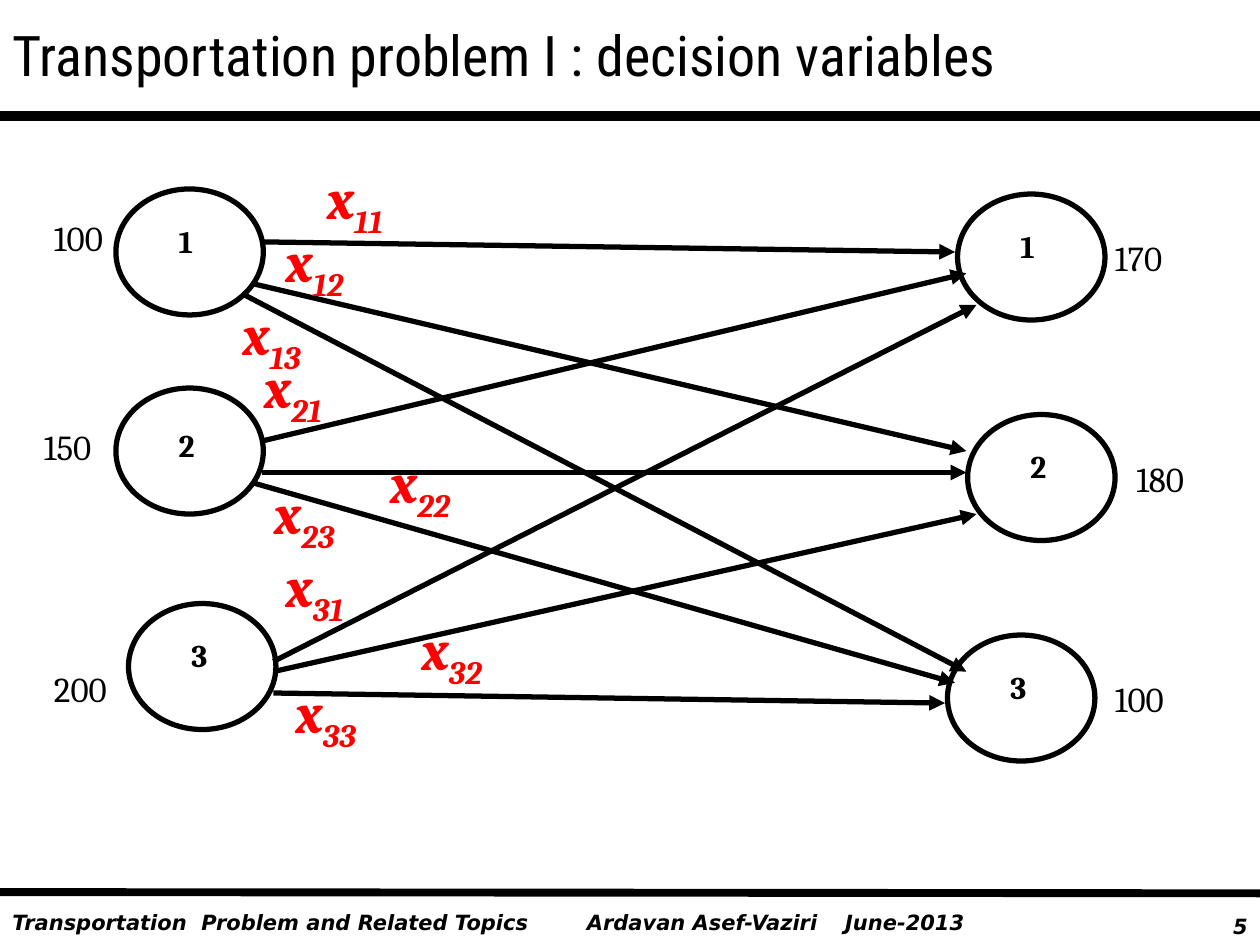
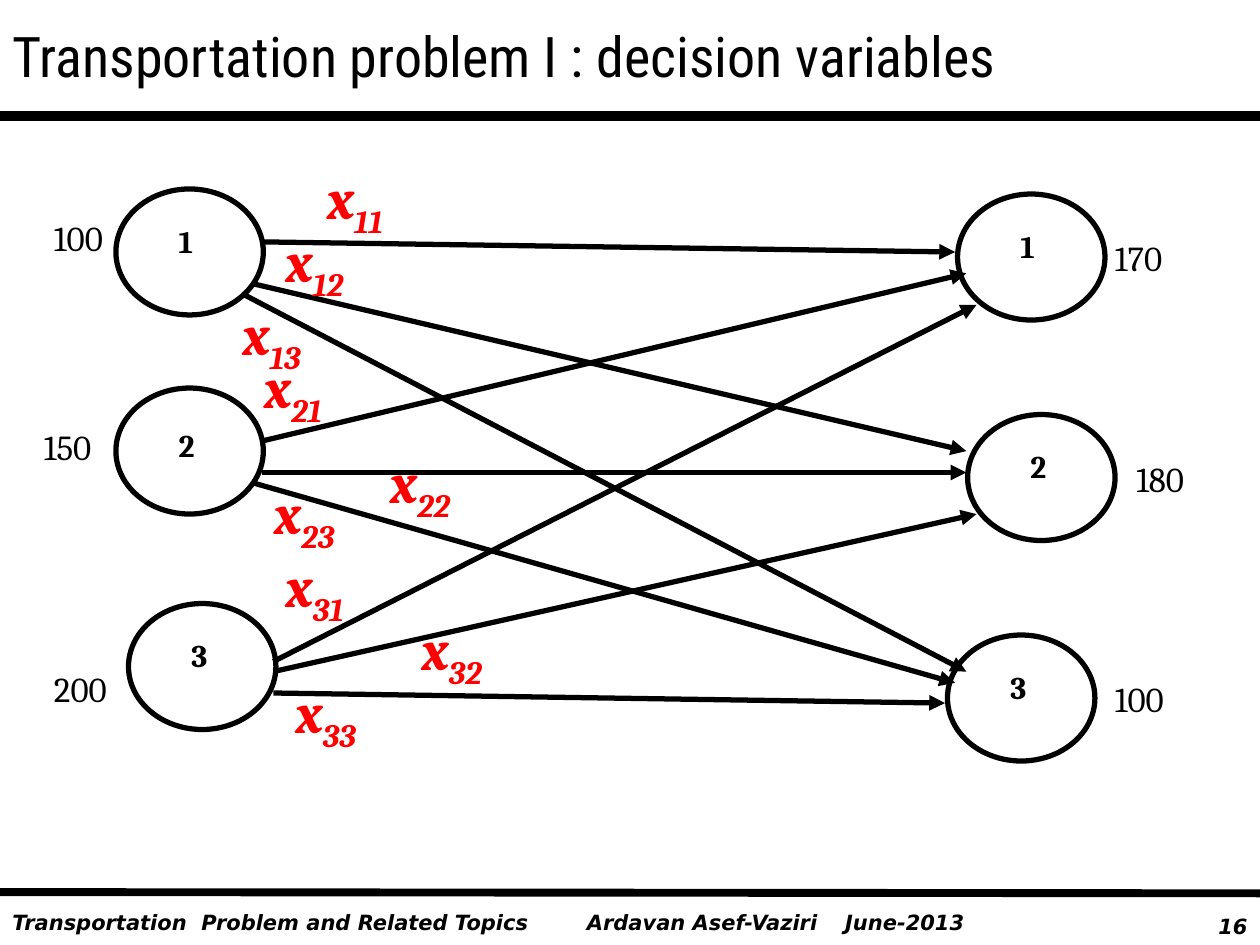
from dataclasses import dataclass

from pptx import Presentation
from pptx import util as u
from pptx.dml.color import RGBColor
from pptx.enum import shapes, text
from pptx.oxml.ns import qn
from lxml import etree


@dataclass(frozen=True)
class Theme:
    ink: str = "000000"
    accent: str = "FF0000"
    title_font: str = "Roboto Condensed"
    footer_font: str = "DejaVu Sans"
    diagram_font: str = "Cambria"
    title_size: int = 32
    variable_size: int = 32
    quantity_size: int = 20
    node_size: int = 18
    footer_size: int = 12
    top_rule: float = 6
    bottom_rule: float = 4.5
    diagram_line: float = 3


THEME = Theme()
TITLE = "Transportation problem I : decision variables"
NODE_WIDTH, NODE_HEIGHT = 1.17, 1

# Nodes: number, left, top, drop of the number inside the circle
SOURCES = [("1", 0.92, 1.5, 0.21), ("2", 0.92, 3.08, 0.25), ("3", 1.02, 4.79, 0.21)]
DESTINATIONS = [("1", 7.6, 1.54, 0.21), ("2", 7.68, 3.29, 0.21), ("3", 7.52, 5.04, 0.21)]

# Supplies and demands: amount, left, top
QUANTITIES = [
    ("100", 0.33, 1.67), ("150", 0.25, 3.33), ("200", 0.33, 5.25),
    ("170", 8.75, 1.83), ("180", 8.92, 3.58), ("100", 8.75, 5.33),
]

# Routes: source and destination, arrow start, arrow end, variable position
ROUTES = [
    ("11", (2.08, 1.92), (7.58, 2), (2.5, 1.25)),
    ("12", (2, 2.25), (7.67, 3.58), (2.17, 1.75)),
    ("13", (1.92, 2.33), (7.67, 5.33), (1.83, 2.33)),
    ("21", (2.08, 3.5), (7.67, 2.17), (2, 2.75)),
    ("22", (2.08, 3.75), (7.67, 3.75), (3, 3.5)),
    ("23", (2, 3.83), (7.58, 5.42), (2.08, 3.75)),
    ("31", (2.17, 5.25), (7.75, 2.42), (2.17, 4.33)),
    ("32", (2.17, 5.33), (7.75, 4.08), (3.25, 4.83)),
    ("33", (2.17, 5.5), (7.5, 5.58), (2.25, 5.33)),
]


def add_run(paragraph, words, *, font, size, color=THEME.ink, bold=False,
            italic=False, baseline=None):
    run = paragraph.add_run()
    run.text = words
    run.font.name = font
    run.font.size = u.Pt(size)
    run.font.bold = bold
    run.font.italic = italic
    run.font.color.rgb = RGBColor.from_string(color)
    if baseline is not None:
        run.font._element.set("baseline", str(baseline * 1000))


def add_text(slide, words, left, top, width, height, *, subscript=None,
             align=text.PP_ALIGN.LEFT, wrap=False, **style):
    box = slide.shapes.add_textbox(*map(u.Inches, (left, top, width, height)))
    frame = box.text_frame
    frame.word_wrap = wrap
    frame.auto_size = text.MSO_AUTO_SIZE.SHAPE_TO_FIT_TEXT
    paragraph = frame.paragraphs[0]
    paragraph.alignment = align
    add_run(paragraph, words, **style)
    if subscript:
        add_run(paragraph, subscript, baseline=-25, **style)


def add_line(slide, start, end, weight, arrow=False):
    line = slide.shapes.add_connector(
        shapes.MSO_CONNECTOR.STRAIGHT, *map(u.Inches, (*start, *end)))
    line.line.color.rgb = RGBColor.from_string(THEME.ink)
    line.line.width = u.Pt(weight)
    if arrow:
        etree.SubElement(line.line._get_or_add_ln(), qn("a:tailEnd"), type="triangle")
    etree.SubElement(line._element.spPr, qn("a:effectLst"))


def add_node(slide, number, left, top, drop):
    circle = slide.shapes.add_shape(
        shapes.MSO_SHAPE.OVAL,
        *map(u.Inches, (left, top, NODE_WIDTH, NODE_HEIGHT)))
    circle.shadow.inherit = False
    circle.fill.background()
    circle.line.color.rgb = RGBColor.from_string(THEME.ink)
    circle.line.width = u.Pt(THEME.diagram_line)
    add_text(slide, number, left + 0.4, top + drop, 0.33, 0.4,
             font=THEME.diagram_font, size=THEME.node_size, bold=True)


def add_route(slide, indices, start, end, label_at):
    add_line(slide, start, end, THEME.diagram_line, arrow=True)
    add_text(slide, "x", *label_at, 1, 0.64, subscript=indices, wrap=True,
             font=THEME.diagram_font, size=THEME.variable_size,
             color=THEME.accent, bold=True, italic=True)


def add_title(slide, words, top):
    title = slide.shapes.title
    title.left, title.top, title.width, title.height = map(
        u.Inches, (0, top, 10, 0.64))
    frame = title.text_frame
    frame.word_wrap = True
    frame.auto_size = text.MSO_AUTO_SIZE.NONE
    frame.vertical_anchor = text.MSO_ANCHOR.MIDDLE
    frame.paragraphs[0].alignment = text.PP_ALIGN.LEFT
    add_run(frame.paragraphs[0], words, font=THEME.title_font, size=THEME.title_size)


def add_frame(slide, page):
    # Rules under the title and above the footer
    add_line(slide, (0, 0.92), (10, 0.92), THEME.top_rule)
    add_line(slide, (0, 7.08), (10, 7.09), THEME.bottom_rule)
    # Footer: topic, author, date, page
    right = text.PP_ALIGN.RIGHT
    left = text.PP_ALIGN.LEFT
    for words, x, y, width, align in [
        ("Transportation  Problem and Related Topics", 0, 7.17, 4.67, left),
        ("Ardavan Asef-Vaziri", 4.56, 7.17, 2.05, left),
        ("June-2013", 6.61, 7.17, 1.3, left),
        (str(page), 9.25, 7.2, 0.75, right),
    ]:
        add_text(slide, words, x, y, width, 0.3, align=align, wrap=True,
                 font=THEME.footer_font, size=THEME.footer_size,
                 bold=True, italic=True)


def add_network(slide):
    for node in SOURCES + DESTINATIONS:
        add_node(slide, *node)
    for amount, left, top in QUANTITIES:
        add_text(slide, amount, left, top, 0.62, 0.44,
                 font=THEME.diagram_font, size=THEME.quantity_size)
    for route in ROUTES:
        add_route(slide, *route)


def main():
    deck = Presentation()
    deck.slide_width, deck.slide_height = u.Inches(10), u.Inches(7.5)
    title_only = deck.slide_layouts[5]
    for page, title_top in [(5, 0.11), (16, 0.12)]:
        slide = deck.slides.add_slide(title_only)
        add_frame(slide, page)
        add_title(slide, TITLE, title_top)
        add_network(slide)
    deck.save("out.pptx")


if __name__ == "__main__":
    main()
